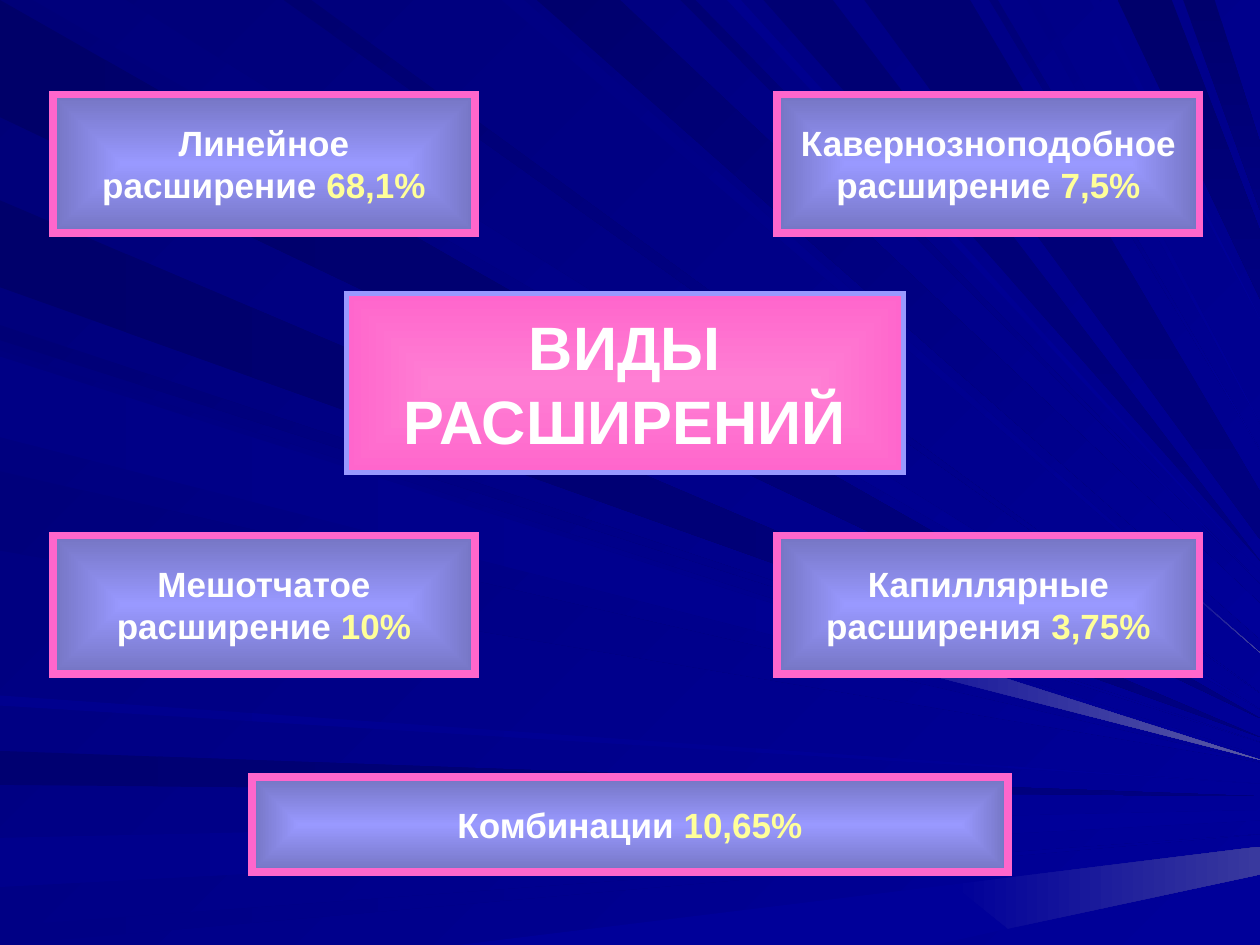
from dataclasses import dataclass, field

from lxml import etree
from pptx import Presentation
from pptx.dml.color import RGBColor
from pptx.enum.shapes import MSO_SHAPE
from pptx.enum.text import MSO_ANCHOR, MSO_AUTO_SIZE, PP_ALIGN
from pptx.oxml.ns import qn
from pptx.util import Inches, Pt

RECT = MSO_SHAPE.RECTANGLE
MIDDLE = MSO_ANCHOR.MIDDLE
CENTER = PP_ALIGN.CENTER
FIXED = MSO_AUTO_SIZE.NONE


@dataclass(frozen=True)
class Theme:
    font: str = "Arial"
    text: str = "FFFFFF"
    value: str = "FFFF99"
    lilac: str = "9999FF"
    dusk: str = "7575C3"
    pink: str = "FF66CC"
    rose: str = "FF7FD4"
    card: int = 20
    title: int = 35
    glow: dict = field(default_factory=lambda: {
        "39": "39399E", "4A": "4A4AA1", "5A": "5A5AA6"})

    def shade(self, key):
        return self.glow.get(key, "0000" + key)


@dataclass(frozen=True)
class Ray:
    side: str
    near: float
    far: float
    tip: float
    start: str
    end: str = "99"
    blunt: float = 0
    tail: str = ""
    cut: float = 0

    def angle(self):
        if self.end == "80":
            return 90 if self.side == "top" else 0
        return 0 if self.side == "left" and self.start >= "80" else 45


THEME = Theme()
WIDTH, HEIGHT = 10, 7.5

RAYS = [
    Ray("left", 0, 0.93, 5.7, "69", "80"),
    Ray("top", 0.26, 1, 5.63, "7B"),
    Ray("left", 5.96, 6.23, 6.32, "71", "80"),
    Ray("left", 6.65, 7.04, 6.47, "8C", blunt=0.08),
    Ray("left", 7.35, 7.5, 6.62, "85"),
    Ray("left", 2.58, 2.7, 5.89, "76"),
    Ray("left", 1.59, 2.28, 5.85, "6B", "80"),
    Ray("top", 3.98, 4.16, 5.18, "83", tail="4A", cut=0.9),
    Ray("top", 4.26, 4.92, 4.93, "6D", blunt=0.28),
    Ray("top", 5.4, 5.52, 4.63, "73"),
    Ray("top", 6.06, 6.61, 4.45, "73", "80"),
    Ray("top", 8.87, 9.3, 2.1, "6B", "80", blunt=0.54),
    Ray("top", 9.39, 9.64, 1.4, "6D", "80", blunt=0.54),
    Ray("left", 2.78, 3.42, 6, "7E"),
    Ray("left", 3.74, 4.37, 6.05, "7B"),
    Ray("left", 5.52, 5.6, 6.22, "8E"),
    Ray("top", 2.25, 2.47, 5.5, "70"),
    Ray("top", 5.77, 5.88, 4.54, "8E"),
    Ray("top", 6.86, 7.7, 4.09, "73", "80", blunt=0.38),
    Ray("top", 7.85, 7.92, 3.57, "78"),
    Ray("top", 8.15, 8.24, 3.36, "85"),
    Ray("top", 8.65, 8.72, 2.53, "8A"),
    Ray("left", 2.83, 3.47, 6.03, "85", tail="5A", cut=0.64),
]
BEAM = [(7.56, 7.02), (10, 6.72), (10, 6.94), (8, 7.37)]

LEFT, RIGHT, UPPER, LOWER = 0.42, 6.17, 0.75, 4.25
WIDE, HIGH = 3.35, 1.1
CARDS = [
    ((LEFT, UPPER, WIDE, HIGH), ["Линейное", "расширение"], "68,1%"),
    ((LEFT, LOWER, WIDE, HIGH), ["Мешотчатое", "расширение"], "10%"),
    ((RIGHT, UPPER, WIDE, HIGH), ["Кавернозноподобное", "расширение"], "7,5%"),
    ((RIGHT, LOWER, WIDE, HIGH), ["Капиллярные", "расширения"], "3,75%"),
    ((2, 6.17, 6, 0.75), ["Комбинации"], "10,65%"),
]


def rgb(code):
    return RGBColor.from_string(code)


def blend(fill, start, end, angle=0):
    fill.gradient()
    fill.gradient_angle = -angle % 360
    for stop, code in zip(fill.gradient_stops, (start, end)):
        stop.color.rgb = rgb(code)


def bevel(shape, core, rim, edge, width):
    blend(shape.fill, core, rim)
    grad = shape.element.spPr.find(qn("a:gradFill"))
    grad.remove(grad.find(qn("a:lin")))
    path = etree.SubElement(grad, qn("a:path"), path="shape")
    half = dict.fromkeys("ltrb", "50000")
    etree.SubElement(path, qn("a:fillToRect"), **half)
    shape.line.color.rgb = rgb(edge)
    shape.line.width = Pt(width)
    line = shape.element.spPr.find(qn("a:ln"))
    etree.SubElement(line, qn("a:miter"), lim="800000")
    shape.shadow.inherit = False


def write(shape, lines, size):
    frame = shape.text_frame
    frame.text = "\n".join(lines)
    frame.word_wrap = False
    frame.auto_size = FIXED
    frame.vertical_anchor = MIDDLE
    for para in frame.paragraphs:
        para.alignment = CENTER
        para.font.name = THEME.font
        para.font.size = Pt(size)
        para.font.bold = True
        para.font.color.rgb = rgb(THEME.text)
    return frame.paragraphs[-1]


def add_shard(group, points, start, end, angle):
    first, *rest = [(Inches(x), Inches(y)) for x, y in points]
    pen = group.shapes.build_freeform(*first)
    pen.add_line_segments(rest)
    shard = pen.convert_to_shape()
    blend(shard.fill, THEME.shade(start), THEME.shade(end), angle)
    shard.line.fill.background()
    shard.shadow.inherit = False


def add_ray(group, ray):
    ends = (ray.near, ray.far)
    base = [(0, y) if ray.side == "left" else (x, 0) for x, y in zip(ends, ends)]
    spread = ray.blunt / 2 * (1 if ray.side == "left" else -1)
    tips = [(WIDTH, ray.tip + spread), (WIDTH, ray.tip - spread)]
    add_shard(group, base + tips, ray.start, ray.end, ray.angle())
    if ray.tail:
        mid = [(x + (WIDTH - x) * ray.cut, y + (ray.tip - y) * ray.cut) for x, y in base]
        add_shard(group, mid + tips, ray.end, ray.tail, ray.angle())


def add_rays(slide):
    blend(slide.background.fill, THEME.shade("78"), THEME.shade("99"), 45)
    group = slide.shapes.add_group_shape()
    for ray in RAYS:
        add_ray(group, ray)
    foot = [BEAM[0], BEAM[-1], (7.42, HEIGHT), (3.64, HEIGHT)]
    add_shard(group, foot, "99", "99", 0)
    add_shard(group, BEAM, "99", "39", 0)


def add_card(slide, box, lines, value):
    card = slide.shapes.add_shape(RECT, *map(Inches, box))
    bevel(card, THEME.lilac, THEME.dusk, THEME.pink, 4.5)
    last = write(card, lines, THEME.card)
    run = last.add_run()
    run.text = " " + value
    run.font.color.rgb = rgb(THEME.value)


def add_title(slide, box):
    title = slide.shapes.title
    title.left, title.top, title.width, title.height = map(Inches, box)
    bevel(title, THEME.rose, THEME.pink, THEME.lilac, 3)
    write(title, ["ВИДЫ", "РАСШИРЕНИЙ"], THEME.title)
    slide.shapes.element.append(title.element)


def main():
    deck = Presentation()
    deck.slide_width, deck.slide_height = Inches(WIDTH), Inches(HEIGHT)
    slide = deck.slides.add_slide(deck.slide_layouts[5])
    add_rays(slide)
    for box, lines, value in CARDS:
        add_card(slide, box, lines, value)
    add_title(slide, (2.75, 2.33, 4.42, 1.42))
    deck.save("out.pptx")


if __name__ == "__main__":
    main()
